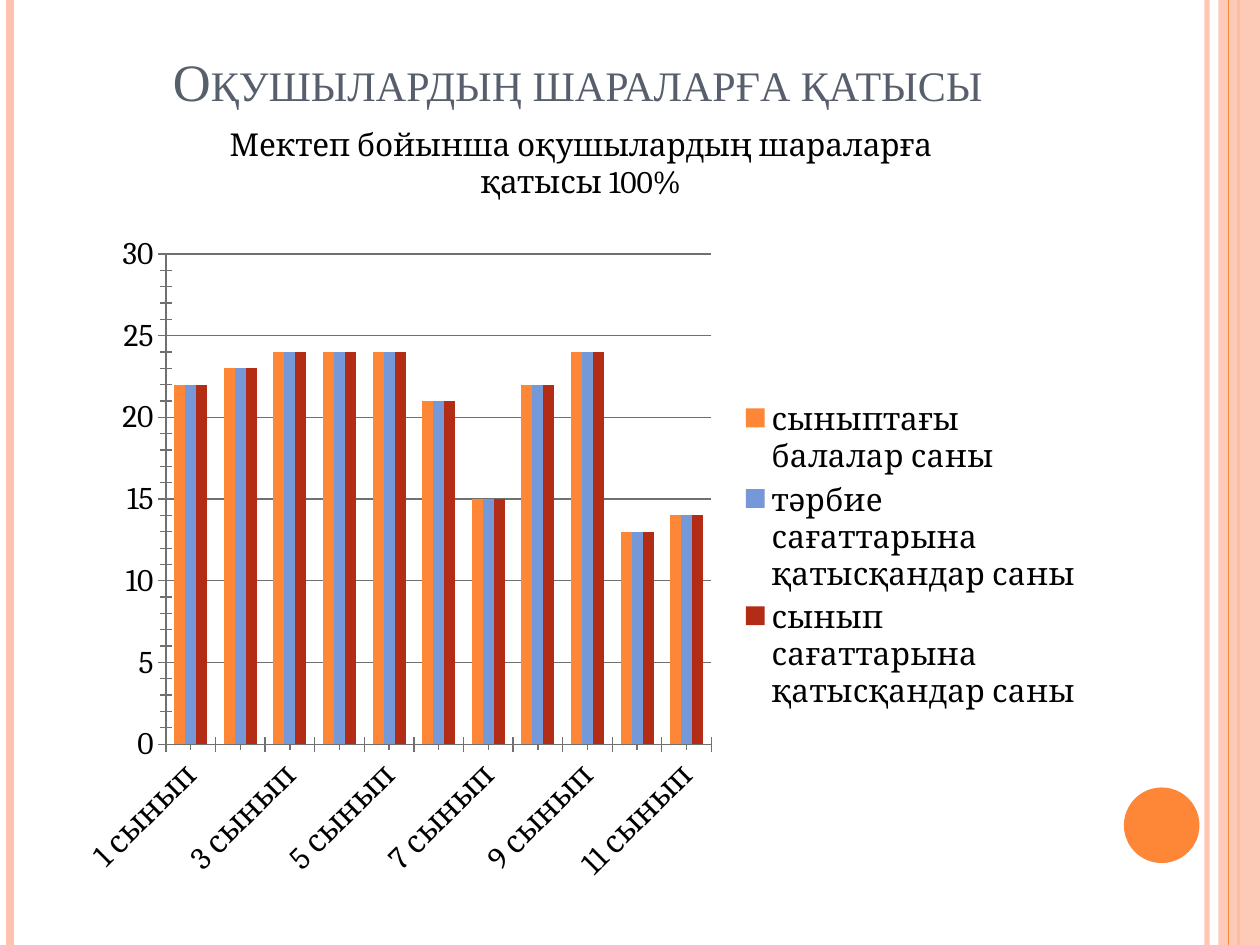
from lxml.etree import SubElement
from pptx import Presentation
from pptx.chart.data import CategoryChartData
from pptx.dml.color import RGBColor
from pptx.enum.chart import XL_CHART_TYPE as ChartType, XL_LEGEND_POSITION as LegendPosition, XL_TICK_MARK as TickMark
from pptx.enum.shapes import MSO_CONNECTOR as Connector, MSO_SHAPE as Shape
from pptx.enum.text import MSO_ANCHOR as Anchor, PP_ALIGN as Align
from pptx.oxml import parse_xml
from pptx.oxml.ns import nsdecls, qn
from pptx.util import Inches, Pt

ORANGE = RGBColor(0xFE, 0x86, 0x37)
PEACH = RGBColor(0xFE, 0xC3, 0xAE)
BLUE = RGBColor(0x75, 0x98, 0xD9)
RED = RGBColor(0xB3, 0x2C, 0x16)
SLATE = RGBColor(0x57, 0x5F, 0x6D)
GRAY = RGBColor(0x70, 0x70, 0x70)
BLACK = RGBColor(0, 0, 0)


def write_text(shape, text, size, font, color, anchor=Anchor.TOP, small_caps=False):
    frame = shape.text_frame
    frame.word_wrap = True
    frame.vertical_anchor = anchor
    paragraph = frame.paragraphs[0]
    paragraph.alignment = Align.CENTER
    run = paragraph.add_run()
    run.text = text
    run.font.size = Pt(size)
    run.font.name = font
    run.font.color.rgb = color
    if small_caps:
        run.font._element.set("cap", "small")


def set_opacity(fill_parent, percent):
    color = fill_parent.find(".//" + qn("a:srgbClr"))
    SubElement(color, qn("a:alpha"), val=str(percent * 1000))


presentation = Presentation()
presentation.slide_width = Inches(10)
presentation.slide_height = Inches(7.5)
slide = presentation.slides.add_slide(presentation.slide_layouts[5])
shapes = slide.shapes

title = shapes.title
title.left, title.top, title.width, title.height = [Inches(n) for n in (0.5, 0.3, 8.17, 0.64)]
write_text(title, "Оқушылардың шараларға қатысы", 30, "Times New Roman", SLATE,
           anchor=Anchor.BOTTOM, small_caps=True)

band = shapes.add_shape(Shape.RECTANGLE, Inches(9.67), 0, Inches(0.33), Inches(7.5))
circle = shapes.add_shape(Shape.OVAL, Inches(8.92), Inches(6.25), Inches(0.6), Inches(0.6))
for shape, color in ((band, PEACH), (circle, ORANGE)):
    shape.shadow.inherit = False
    shape.fill.solid()
    shape.fill.fore_color.rgb = color
    shape.line.fill.background()
set_opacity(band._element.spPr, 87)

for x, color, width, opacity in (
    (9.58, PEACH, 3, 93),
    (0.08, PEACH, 4.5, 100),
    (9.83, ORANGE, 1.5, 100),
    (9.75, ORANGE, 0.75, 100),
):
    stripe = shapes.add_connector(Connector.STRAIGHT, Inches(x), 0, Inches(x), Inches(7.5))
    stripe.line.color.rgb = color
    stripe.line.width = Pt(width)
    if opacity < 100:
        set_opacity(stripe._element.spPr, opacity)
    SubElement(stripe._element.spPr, qn("a:effectLst"))
    if x == 9.83:
        band._element.addprevious(stripe._element)

attendance = (22, 23, 24, 24, 24, 21, 15, 22, 24, 13, 14)
series_colors = {
    "сыныптағы балалар саны": ORANGE,
    "тәрбие сағаттарына қатысқандар саны": BLUE,
    "сынып сағаттарына қатысқандар саны": RED,
}
chart_data = CategoryChartData()
chart_data.categories = [f"{grade} сынып" for grade in range(1, 12)]
for name in series_colors:
    chart_data.add_series(name, attendance)
chart = shapes.add_chart(ChartType.COLUMN_CLUSTERED, Inches(0.5), Inches(1.75),
                         Inches(8.17), Inches(5.33), chart_data).chart
chart.has_title = False
chart.font.size = Pt(18)
chart.font.name = "Cambria"
chart.font.color.rgb = BLACK

plot = chart.plots[0]
plot.gap_width = 150
plot.overlap = 0
plot.vary_by_categories = False
for series, color in zip(plot.series, series_colors.values()):
    series.format.fill.solid()
    series.format.fill.fore_color.rgb = color

value_axis = chart.value_axis
value_axis.minimum_scale = 0
value_axis.maximum_scale = 30
value_axis.major_unit = 5
value_axis.minor_unit = 1
category_axis = chart.category_axis
for axis in (value_axis, category_axis):
    axis.major_tick_mark = TickMark.CROSS
    axis.minor_tick_mark = TickMark.CROSS
    axis.format.line.color.rgb = GRAY
    axis._element.remove(axis._element.find(qn("c:delete")))
category_axis.minor_tick_mark = TickMark.OUTSIDE
gridlines = value_axis.major_gridlines.format.line
gridlines.color.rgb = GRAY
gridlines.width = Pt(0.75)
category_axis.tick_labels.font.size = Pt(18)
category_axis._element.find(qn("c:txPr")).find(qn("a:bodyPr")).set("rot", "-2700000")
label_skip = parse_xml(f'<c:tickLblSkip {nsdecls("c")} val="2"/>')
category_axis._element.find(qn("c:noMultiLvlLbl")).addprevious(label_skip)

chart.has_legend = True
legend = chart.legend
legend.position = LegendPosition.RIGHT
legend.include_in_layout = True

plot_area = chart._chartSpace.chart.plotArea
for owner in (plot_area, legend._element):
    for layout in owner.findall(qn("c:layout")):
        owner.remove(layout)
for owner, position, target, box in (
    (plot_area, 0, '<c:layoutTarget val="inner"/>', (0.1, 0.05, 0.53, 0.73)),
    (legend._element, 1, "", (0.66, 0.26, 0.33, 0.48)),
):
    parts = target + '<c:xMode val="edge"/><c:yMode val="edge"/>'
    parts += "".join(f'<c:{key} val="{value}"/>' for key, value in zip("xywh", box))
    layout = parse_xml(f'<c:layout {nsdecls("c")}><c:manualLayout>{parts}</c:manualLayout></c:layout>')
    owner.insert(position, layout)

subtitle = shapes.add_textbox(Inches(1.25), Inches(0.94), Inches(6.72), Inches(0.71))
write_text(subtitle, "Мектеп бойынша оқушылардың шараларға қатысы 100%", 18, "Cambria", BLACK)

presentation.save("out.pptx")
